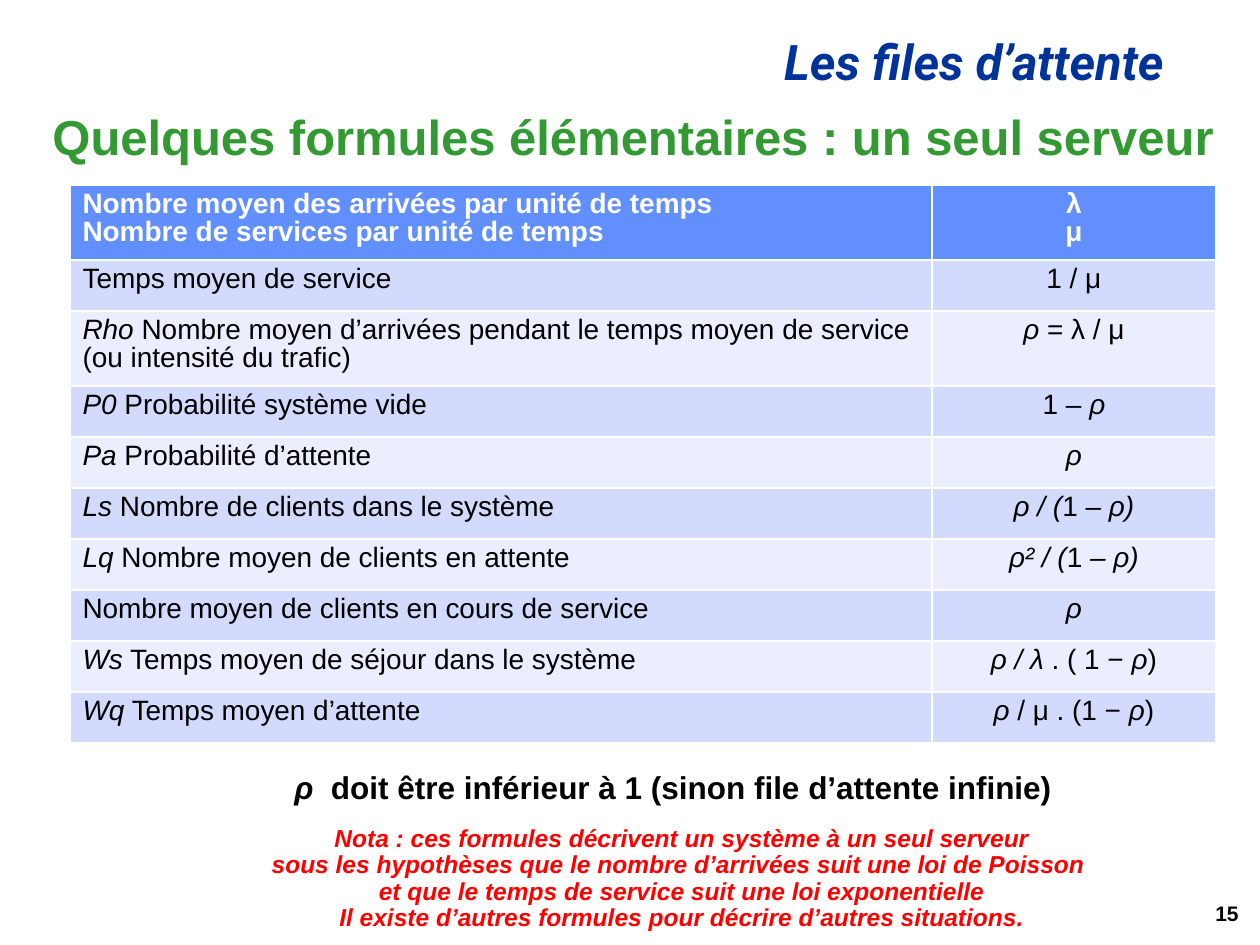
import copy
import pptx
import pptx.dml.color
import pptx.enum.text
import pptx.util

PX = 914400 // 126
ALIGN = pptx.enum.text.PP_ALIGN
ANCHOR = pptx.enum.text.MSO_ANCHOR
THEME = {
    "navy": "003399", "green": "339933", "red": "FF0000",
    "black": "000000", "white": "FFFFFF",
    "header": "618FFD", "odd": "D2DBFE", "even": "EAEEFF",
    "heading_size": 28, "rule_size": 18, "table_size": 16,
    "note_size": 14, "number_size": 12,
    "font": "Arial", "course_font": "Roboto",
}


def write(frame, paragraphs, size, color, align=ALIGN.LEFT, bold=False,
          font="font", spacing=0.9):
    """Fill a frame; *stars* enclose italics and a newline is a line break."""
    for index, content in enumerate(paragraphs):
        paragraph = frame.paragraphs[0] if index == 0 else frame.add_paragraph()
        paragraph.alignment = align
        paragraph.line_spacing = spacing
        for part, styled in enumerate(content.split("*")):
            for line, words in enumerate(styled.split("\n")):
                if line:
                    paragraph.add_line_break()
                    paragraph._p[-1].append(copy.deepcopy(run._r.rPr))
                if not words:
                    continue
                run = paragraph.add_run()
                run.text = words
                run.font.name = THEME[font]
                run.font.size = pptx.util.Pt(THEME[size])
                run.font.bold = bold
                run.font.italic = part % 2 == 1
                run.font.color.rgb = pptx.dml.color.RGBColor.from_string(THEME[color])


def add_text(box, paragraphs, size, color, align, wrap=True,
             anchor=ANCHOR.TOP, **style):
    frame = slide.shapes.add_textbox(*(length * PX for length in box)).text_frame
    frame.word_wrap = wrap
    frame.vertical_anchor = anchor
    write(frame, paragraphs, size, color, align, bold=True, **style)


deck = pptx.Presentation()
deck.slide_width, deck.slide_height = pptx.util.Inches(10), pptx.util.Inches(7.5)
slide = deck.slides.add_slide(deck.slide_layouts[6])

add_text((158, 32, 1018, 66), ["*Les files d’attente*"], "heading_size", "navy",
         ALIGN.RIGHT, font="course_font")
add_text((34, 108, 1192, 63), ["Quelques formules élémentaires : un seul serveur"],
         "heading_size", "green", ALIGN.RIGHT, anchor=ANCHOR.MIDDLE)

# Each row: description, formula, height in px
ROW, TALL_ROW = 51, 75
formulas = [
    ("Temps moyen de service", "1 / μ", ROW),
    ("*Rho* Nombre moyen d’arrivées pendant le temps moyen de service\n"
     "(ou intensité du trafic)", "*ρ* = λ / μ", TALL_ROW),
    ("*P0* Probabilité système vide", "1 – *ρ*", ROW),
    ("*Pa* Probabilité d’attente", "*ρ*", ROW),
    ("*Ls* Nombre de clients dans le système", "*ρ / (*1* – ρ)*", ROW),
    ("*Lq* Nombre moyen de clients en attente", "*ρ² / (*1* – ρ)*", ROW),
    ("Nombre moyen de clients en cours de service", "*ρ*", ROW),
    ("*Ws* Temps moyen de séjour dans le système", "*ρ / λ *. ( 1 − *ρ*)", ROW),
    ("*Wq* Temps moyen d’attente", "*ρ* / μ . (1 − *ρ*)", ROW),
]
header = (["Nombre moyen des arrivées par unité de temps",
           "Nombre de services par unité de temps"], ["λ", "μ"], TALL_ROW)
rows = [header] + [([label], [formula], height) for label, formula, height in formulas]
widths = (862, 284)
table = slide.shapes.add_table(
    len(rows), 2, 70 * PX, 185 * PX, sum(widths) * PX,
    sum(row[2] for row in rows) * PX).table
for column, width in zip(table.columns, widths):
    column.width = width * PX
for r, (label, formula, height) in enumerate(rows):
    table.rows[r].height = height * PX
    is_header = r == 0
    fill = "header" if is_header else "odd" if r % 2 else "even"
    for c, (content, align) in enumerate(((label, ALIGN.LEFT), (formula, ALIGN.CENTER))):
        cell = table.cell(r, c)
        cell.fill.solid()
        cell.fill.fore_color.rgb = pptx.dml.color.RGBColor.from_string(THEME[fill])
        write(cell.text_frame, content, "table_size",
              "white" if is_header else "black", align, bold=is_header)

add_text((282, 766, 793, 47),
         ["*ρ * doit être inférieur à 1 (sinon file d’attente infinie)"],
         "rule_size", "black", ALIGN.LEFT, wrap=False)
add_text((258, 820, 848, 120),
         ["*Nota : ces formules décrivent un système à un seul serveur\n"
          "sous les hypothèses que le nombre d’arrivées suit une loi de Poisson \n"
          "et que le temps de service suit une loi exponentielle*",
          "*Il existe d’autres formules pour décrire d’autres situations.*"],
         "note_size", "red", ALIGN.CENTER, wrap=False)
add_text((968, 888, 283, 50), ["15"], "number_size", "black", ALIGN.RIGHT,
         anchor=ANCHOR.MIDDLE, spacing=1.0)

deck.save("out.pptx")
